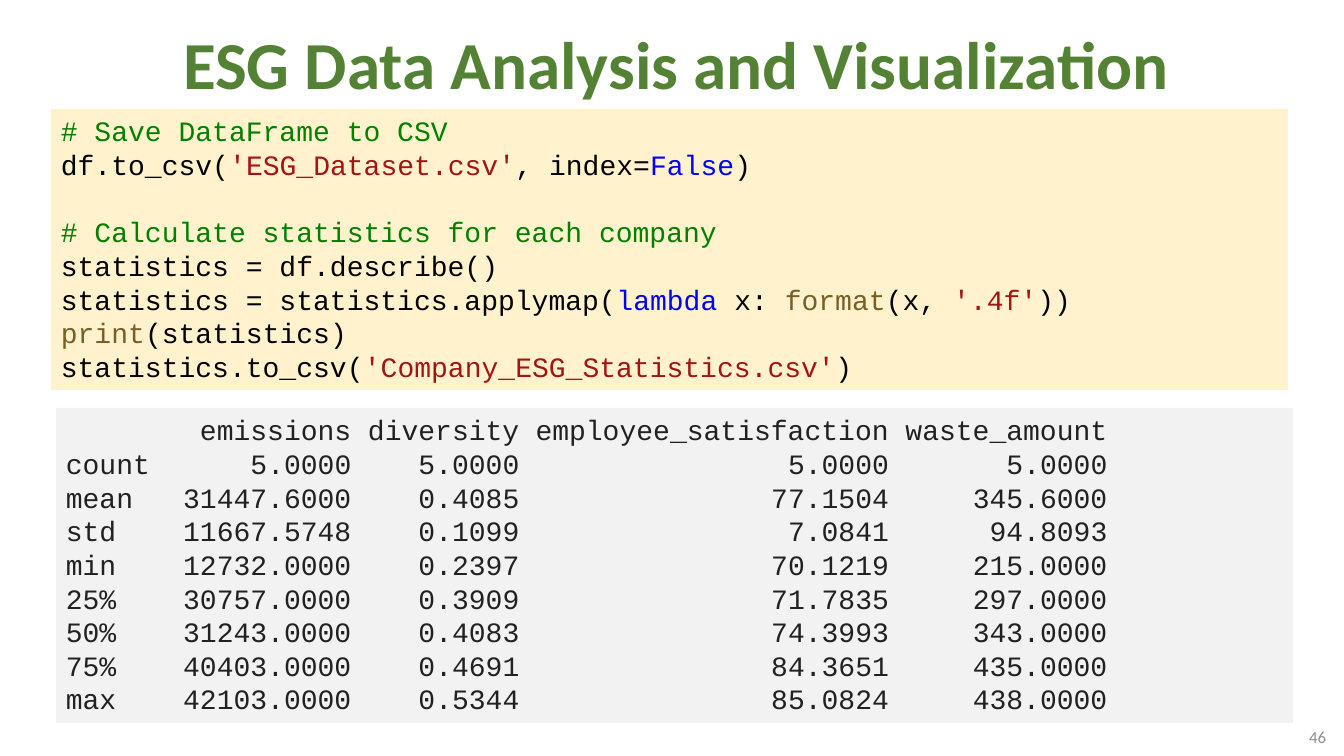
from dataclasses import dataclass

from lxml.etree import SubElement
from pptx import Presentation
from pptx.dml.color import RGBColor
from pptx.enum.shapes import MSO_SHAPE
from pptx.enum.text import MSO_ANCHOR, PP_ALIGN
from pptx.oxml.ns import qn
from pptx.util import Inches, Pt


@dataclass(frozen=True)
class Theme:
    heading_font: str = "Calibri"
    code_font: str = "Courier New"
    title: str = "548235"
    page: str = "8C8C8C"
    code_fill: str = "FFF2CC"
    output_fill: str = "F2F2F2"
    output: str = "212121"
    plain: str = "000000"
    comment: str = "008000"
    string: str = "A31515"
    keyword: str = "0000FF"
    function: str = "795E26"
    title_size: int = 48
    page_size: int = 12
    code_size: int = 20
    code_pitch: int = 24
    char_width: int = 12


THEME = Theme()
PX_PER_INCH = 100.8


def px(length):
    return round(length * Inches(1) / PX_PER_INCH)


class SlideBuilder:
    def __init__(self, slide, theme):
        self.slide = slide
        self.theme = theme

    def style(self, run, font, size, color, bold=False):
        run.font.name = font
        run.font.size = Pt(size)
        run.font.bold = bold
        run.font.color.rgb = RGBColor.from_string(color)

    def label(self, text, box, font, size, color, align, bold=False):
        frame = self.slide.shapes.add_textbox(*map(px, box)).text_frame
        frame.word_wrap = True
        frame.vertical_anchor = MSO_ANCHOR.MIDDLE
        frame.text = text
        line = frame.paragraphs[0]
        line.alignment = align
        self.style(line.runs[0], font, size, color, bold)

    def panel(self, box, fill, lines, tab_columns=()):
        """Each line is a list of (text, color) tokens; tabs end at character columns."""
        panel = self.slide.shapes.add_shape(MSO_SHAPE.RECTANGLE, *map(px, box))
        panel.shadow.inherit = False
        panel.fill.solid()
        panel.fill.fore_color.rgb = RGBColor.from_string(fill)
        panel.line.fill.background()
        frame = panel.text_frame
        frame.word_wrap = True
        frame.vertical_anchor = MSO_ANCHOR.TOP
        gap = 0
        first = True
        for tokens in lines:
            if not tokens:
                gap = self.theme.code_pitch
                continue
            line = frame.paragraphs[0] if first else frame.add_paragraph()
            first = False
            line.alignment = PP_ALIGN.LEFT
            line.line_spacing = Pt(self.theme.code_pitch)
            line.space_before = Pt(gap)
            gap = 0
            self.right_tabs(line, tab_columns)
            for text, color in tokens:
                run = line.add_run()
                run.text = text
                self.style(run, self.theme.code_font, self.theme.code_size, color)

    def right_tabs(self, line, columns):
        if columns:
            stops = SubElement(line._p.get_or_add_pPr(), qn("a:tabLst"))
            for column in columns:
                position = Pt(column * self.theme.char_width)
                SubElement(stops, qn("a:tab"), pos=str(position), algn="r")


# Code listing; an empty line becomes a paragraph gap
CODE = [
    [("# Save DataFrame to CSV", THEME.comment)],
    [("df.to_csv(", THEME.plain), ("'ESG_Dataset.csv'", THEME.string),
     (", index=", THEME.plain), ("False", THEME.keyword), (")", THEME.plain)],
    [],
    [("# Calculate statistics for each company", THEME.comment)],
    [("statistics = df.describe()", THEME.plain)],
    [("statistics = statistics.applymap(", THEME.plain), ("lambda", THEME.keyword),
     (" x: ", THEME.plain), ("format", THEME.function), ("(x, ", THEME.plain),
     ("'.4f'", THEME.string), ("))", THEME.plain)],
    [("print", THEME.function), ("(statistics)", THEME.plain)],
    [("statistics.to_csv(", THEME.plain),
     ("'Company_ESG_Statistics.csv'", THEME.string), (")", THEME.plain)],
]

# Printed statistics, right-aligned at these character columns
STATISTICS_COLUMNS = (17, 27, 49, 62)
STATISTICS = [
    ("", "emissions", "diversity", "employee_satisfaction", "waste_amount"),
    ("count", "5.0000", "5.0000", "5.0000", "5.0000"),
    ("mean", "31447.6000", "0.4085", "77.1504", "345.6000"),
    ("std", "11667.5748", "0.1099", "7.0841", "94.8093"),
    ("min", "12732.0000", "0.2397", "70.1219", "215.0000"),
    ("25%", "30757.0000", "0.3909", "71.7835", "297.0000"),
    ("50%", "31243.0000", "0.4083", "74.3993", "343.0000"),
    ("75%", "40403.0000", "0.4691", "84.3651", "435.0000"),
    ("max", "42103.0000", "0.5344", "85.0824", "438.0000"),
]


def main():
    deck = Presentation()
    deck.slide_width, deck.slide_height = px(1344), px(756)
    builder = SlideBuilder(deck.slides.add_slide(deck.slide_layouts[6]), THEME)

    # Title and page number
    builder.label("ESG Data Analysis and Visualization", (58, 15, 1237, 95),
                  THEME.heading_font, THEME.title_size, THEME.title,
                  PP_ALIGN.CENTER, bold=True)
    builder.label("46", (1230, 724, 106, 26), THEME.heading_font,
                  THEME.page_size, THEME.page, PP_ALIGN.RIGHT)

    # Code and its output
    builder.panel((51, 109, 1237, 281), THEME.code_fill, CODE)
    output = [[("\t".join(row), THEME.output)] for row in STATISTICS]
    builder.panel((56, 408, 1237, 315), THEME.output_fill, output, STATISTICS_COLUMNS)

    deck.save("out.pptx")


if __name__ == "__main__":
    main()
